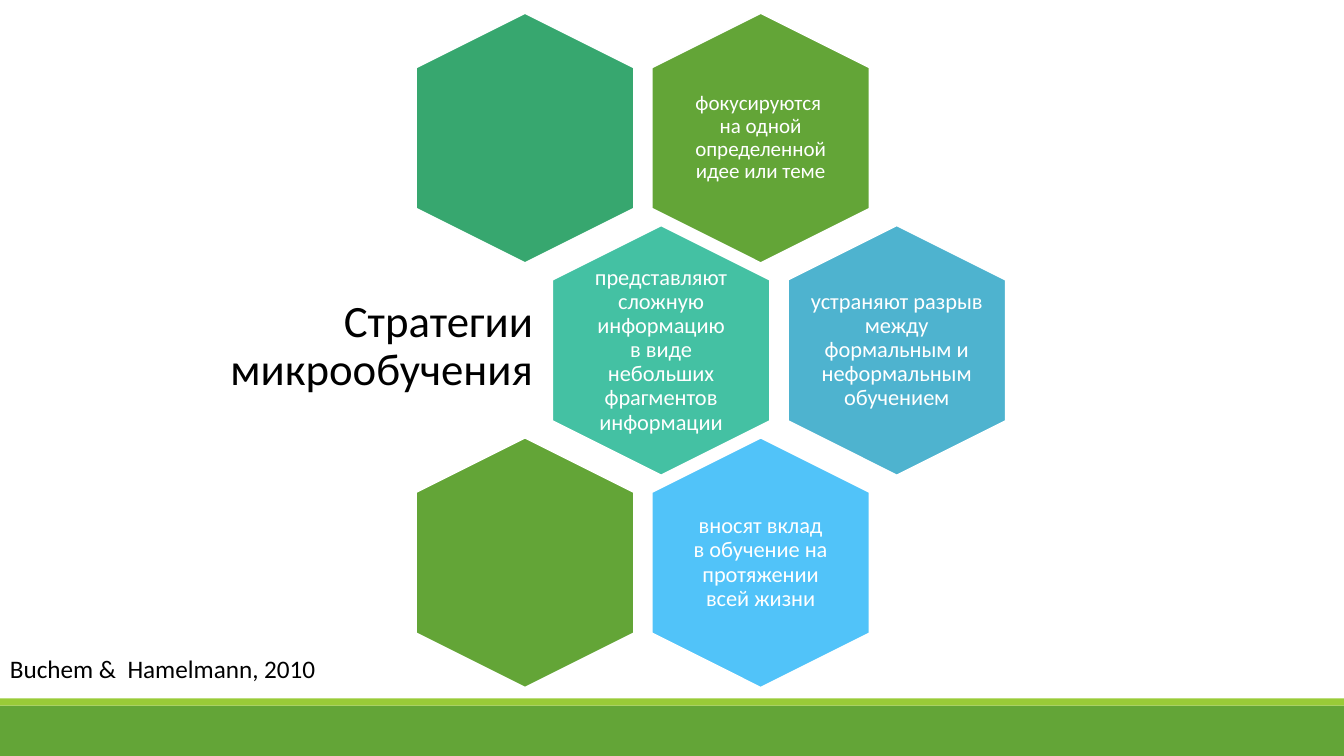
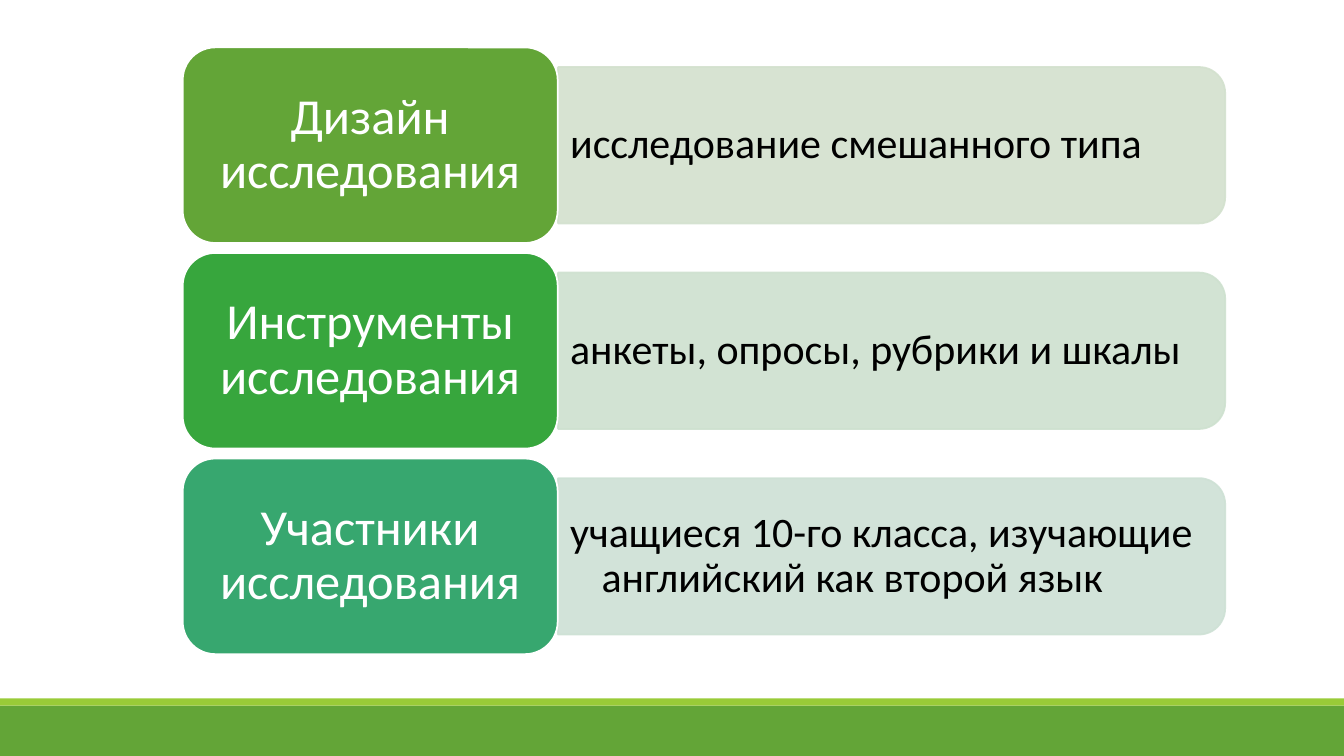
from lxml.etree import SubElement
from pptx import Presentation
from pptx.dml.color import RGBColor
from pptx.enum.shapes import MSO_SHAPE
from pptx.enum.text import MSO_ANCHOR, MSO_AUTO_SIZE, PP_ALIGN
from pptx.oxml.ns import qn
from pptx.util import Cm, Pt

WHITE = RGBColor(0xFF, 0xFF, 0xFF)
BLACK = RGBColor(0x00, 0x00, 0x00)
LEAF = RGBColor(0x63, 0xA5, 0x37)
LIME = RGBColor(0x99, 0xCB, 0x38)
GREEN = RGBColor(0x37, 0xA6, 0x3D)
JADE = RGBColor(0x37, 0xA7, 0x6F)
TEAL = RGBColor(0x44, 0xC1, 0xA3)
STEEL = RGBColor(0x4E, 0xB3, 0xCF)
SKY = RGBColor(0x51, 0xC3, 0xF9)
PALE_LEAF = RGBColor(0xD3, 0xE1, 0xCE)
PALE_GREEN = RGBColor(0xCE, 0xE1, 0xCF)
PALE_JADE = RGBColor(0xCE, 0xE1, 0xD5)

FONT = "Calibri"
PAGE_WIDTH, PAGE_HEIGHT = 33.87, 19.05


def write_text(box, text, size, color=BLACK, align=PP_ALIGN.LEFT, anchor=MSO_ANCHOR.MIDDLE,
               inset=(0.18, 0.18), spacing=0.9, hanging=0, fit=MSO_AUTO_SIZE.NONE):
    """Fill a box with one paragraph; inset is (horizontal, vertical) in cm."""
    frame = box.text_frame
    frame.word_wrap = True
    frame.auto_size = fit
    frame.vertical_anchor = anchor
    frame.margin_left = frame.margin_right = Cm(inset[0])
    frame.margin_top = frame.margin_bottom = Cm(inset[1])
    para = frame.paragraphs[0]
    para.alignment = align
    para.line_spacing = spacing
    if hanging:
        para.level = 1
        properties = para._p.get_or_add_pPr()
        properties.set("marL", str(Cm(hanging)))
        properties.set("indent", str(-Cm(hanging)))
    span = para.add_run()
    span.text = text
    span.font.name = FONT
    span.font.size = Pt(size)
    span.font.color.rgb = color


def add_filled_shape(page, kind, center_x, center_y, width, height, fill,
                     line=None, rotation=0, opacity=100):
    """Add a shape around its centre, in cm, so that rotation keeps its place."""
    shape = page.shapes.add_shape(kind, Cm(center_x - width / 2), Cm(center_y - height / 2),
                                  Cm(width), Cm(height))
    shape.shadow.inherit = False
    shape.rotation = rotation
    shape.fill.solid()
    shape.fill.fore_color.rgb = fill
    if line is None:
        shape.line.fill.background()
    else:
        shape.line.color.rgb = line
        shape.line.width = Pt(1.25)
    if opacity < 100:
        for color in shape._element.spPr.iter(qn("a:srgbClr")):
            SubElement(color, qn("a:alpha")).set("val", str(opacity * 1000))
    return shape


deck = Presentation()
deck.slide_width = Cm(PAGE_WIDTH)
deck.slide_height = Cm(PAGE_HEIGHT)
title_only, blank = deck.slide_layouts[5], deck.slide_layouts[6]

# Slide 1: honeycomb of strategies
page = deck.slides.add_slide(title_only)

# The bands belong to the master, so every slide shows them
master_tree = deck.slide_master.shapes._spTree
for top, height, color in [(17.78, 1.27, LEAF), (17.6, 0.18, LIME)]:
    band = add_filled_shape(page, MSO_SHAPE.RECTANGLE, PAGE_WIDTH / 2, top + height / 2,
                            PAGE_WIDTH, height, color)
    master_tree.append(band._element)

title = page.shapes.title
title.left, title.top, title.width, title.height = Cm(5.03), Cm(6.86), Cm(8.74), Cm(3.78)
write_text(title, "Стратегии микрообучения", 32, align=PP_ALIGN.RIGHT, inset=(0.33, 0.33))

FIRST_X, FIRST_Y = 13.23, 3.48
STEP_X, STEP_Y, ROW_SHIFT = 5.94, 5.35, 3.43
NARROW, WIDE = (3.78, 4.34), (5.03, 3.53)
strategies = [
    (0, 0, JADE, None, None, None),
    (0, 1, LEAF, "фокусируются  на одной определенной идее или теме", 15, NARROW),
    (1, 0, TEAL, "представляют сложную информацию в виде небольших фрагментов информации",
     16, NARROW),
    (1, 1, STEEL, "устраняют разрыв между формальным и неформальным обучением", 16, WIDE),
    (2, 0, LEAF, None, None, None),
    (2, 1, SKY, "вносят вклад в обучение на протяжении всей жизни", 16, NARROW),
]
for row, column, color, text, size, area in strategies:
    x = FIRST_X + column * STEP_X + row % 2 * ROW_SHIFT
    y = FIRST_Y + row * STEP_Y
    add_filled_shape(page, MSO_SHAPE.HEXAGON, x, y, 6.3, 5.49, color, line=WHITE, rotation=90)
    if text:
        width, height = area
        box = page.shapes.add_textbox(Cm(x - width / 2), Cm(y - height / 2),
                                      Cm(width), Cm(height))
        write_text(box, text, size, color=WHITE, align=PP_ALIGN.CENTER)

citation = page.shapes.add_textbox(Cm(0), Cm(16.33), Cm(16.94), Cm(1.02))
write_text(citation, "Buchem &  Hamelmann, 2010", 18, anchor=MSO_ANCHOR.TOP,
           inset=(0.25, 0.13), spacing=1.0, fit=MSO_AUTO_SIZE.SHAPE_TO_FIT_TEXT)

# Slide 2: research outline
page = deck.slides.add_slide(blank)
outline = [
    ("Дизайн исследования", LEAF, "исследование смешанного типа", PALE_LEAF),
    ("Инструменты исследования", GREEN, "анкеты, опросы, рубрики и шкалы", PALE_GREEN),
    ("Участники исследования", JADE,
     "учащиеся 10-го класса, изучающие английский как второй язык", PALE_JADE),
]
for row, (heading, color, detail, pale) in enumerate(outline):
    y = 3.66 + row * 5.18
    add_filled_shape(page, MSO_SHAPE.ROUND_2_SAME_RECTANGLE, 22.47, y, 3.94, 16.81, pale,
                     line=pale, rotation=90, opacity=90)
    box = page.shapes.add_textbox(Cm(14.07), Cm(y - 1.78), Cm(16.61), Cm(3.56))
    write_text(box, detail, 30, inset=(0.3, 0.15), hanging=0.79)
    card = add_filled_shape(page, MSO_SHAPE.ROUNDED_RECTANGLE, 9.33, y, 9.45, 4.93, color,
                            line=WHITE)
    write_text(card, heading, 36, color=WHITE, align=PP_ALIGN.CENTER, inset=(0.38, 0.18))

deck.save("out.pptx")
